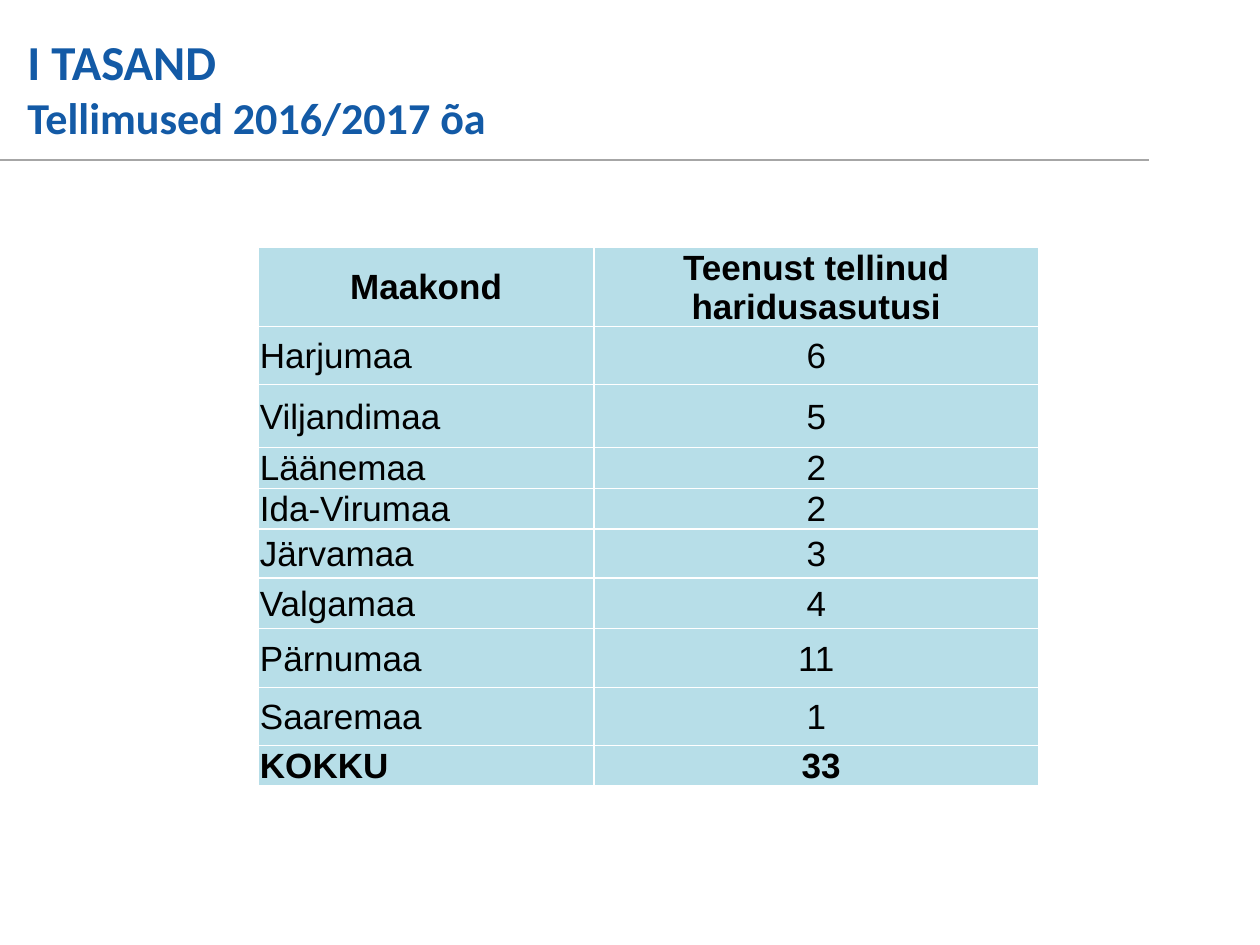
from lxml.etree import SubElement
from pptx import Presentation
from pptx.dml.color import RGBColor
from pptx.enum.shapes import MSO_CONNECTOR as Connector
from pptx.enum.text import MSO_ANCHOR as Anchor, MSO_AUTO_SIZE as AutoSize, PP_ALIGN as Align
from pptx.oxml.ns import qn
from pptx.util import Cm, Pt

COUNTIES = [
    ("Maakond", "Teenust tellinud haridusasutusi", 1.6),
    ("Harjumaa", "6", 1.17),
    ("Viljandimaa", "5", 1.27),
    ("Läänemaa", "2", 0.48),
    ("Ida-Virumaa", "2", 0.48),
    ("Järvamaa", "3", 0.99),
    ("Valgamaa", "4", 1.02),
    ("Pärnumaa", "11", 1.19),
    ("Saaremaa", "1", 1.17),
    ("KOKKU", " 33", 0.48),
]
COLUMN_WIDTHS = (6.76, 8.97)


def color(value):
    return RGBColor.from_string(value)


def add_run(paragraph, text, size, font, ink, bold):
    run = paragraph.add_run()
    run.text = text
    run.font.size = Pt(size)
    run.font.name = font
    run.font.bold = bold
    run.font.color.rgb = color(ink)


def fill_title(title):
    title.left, title.top, title.width, title.height = Cm(0.3), Cm(0.56), Cm(21.13), Cm(2.41)
    frame = title.text_frame
    frame.auto_size = AutoSize.NONE
    frame.word_wrap = True
    frame.vertical_anchor = Anchor.MIDDLE
    heading = frame.paragraphs[0]
    heading.alignment = Align.LEFT
    add_run(heading, "I TASAND", 27.9, "Calibri", "135AA6", True)
    heading.add_line_break()
    add_run(heading, "Tellimused 2016/2017 õa", 25.2, "Calibri", "135AA6", True)


def add_rule(slide):
    rule = slide.shapes.add_connector(Connector.STRAIGHT, Cm(-0.5), Cm(3.22), Cm(23.16), Cm(3.22))
    rule.line.color.rgb = color("A6A6A6")
    rule.line.width = Pt(1)
    SubElement(rule._element.spPr, qn("a:effectLst"))


def set_borders(cell, ink, width):
    properties = cell._tc.get_or_add_tcPr()
    for side in ("lnL", "lnR", "lnT", "lnB"):
        border = SubElement(properties, qn(f"a:{side}"), w=str(Pt(width)))
        border_fill = SubElement(border, qn("a:solidFill"))
        SubElement(border_fill, qn("a:srgbClr"), val=ink)


def fill_cell(cell, text, alignment, bold):
    set_borders(cell, "FFFFFF", 1)
    cell.fill.solid()
    cell.fill.fore_color.rgb = color("B7DEE8")
    cell.vertical_anchor = Anchor.MIDDLE
    cell.margin_left = cell.margin_top = cell.margin_right = Cm(0.03)
    cell.margin_bottom = 0
    paragraph = cell.text_frame.paragraphs[0]
    paragraph.alignment = alignment
    add_run(paragraph, text, 20, "Arial", "000000", bold)


def add_county_table(slide):
    height = Cm(11.13)
    frame = slide.shapes.add_table(
        len(COUNTIES), len(COLUMN_WIDTHS), Cm(5.21), Cm(4.98), Cm(sum(COLUMN_WIDTHS)), height
    )
    table = frame.table
    table.first_row = table.horz_banding = False
    for column, width in zip(table.columns, COLUMN_WIDTHS):
        column.width = Cm(width)
    last = len(COUNTIES) - 1
    for index, (county, orders, row_height) in enumerate(COUNTIES):
        table.rows[index].height = Cm(row_height)
        bold = index in (0, last)
        county_alignment = Align.CENTER if index == 0 else Align.LEFT
        fill_cell(table.cell(index, 0), county, county_alignment, bold)
        fill_cell(table.cell(index, 1), orders, Align.CENTER, bold)
    frame.height = height


def main():
    deck = Presentation()
    deck.slide_width, deck.slide_height = Cm(25.4), Cm(19.05)
    slide = deck.slides.add_slide(deck.slide_layouts[5])
    fill_title(slide.shapes.title)
    add_rule(slide)
    add_county_table(slide)
    deck.save("out.pptx")


if __name__ == "__main__":
    main()
